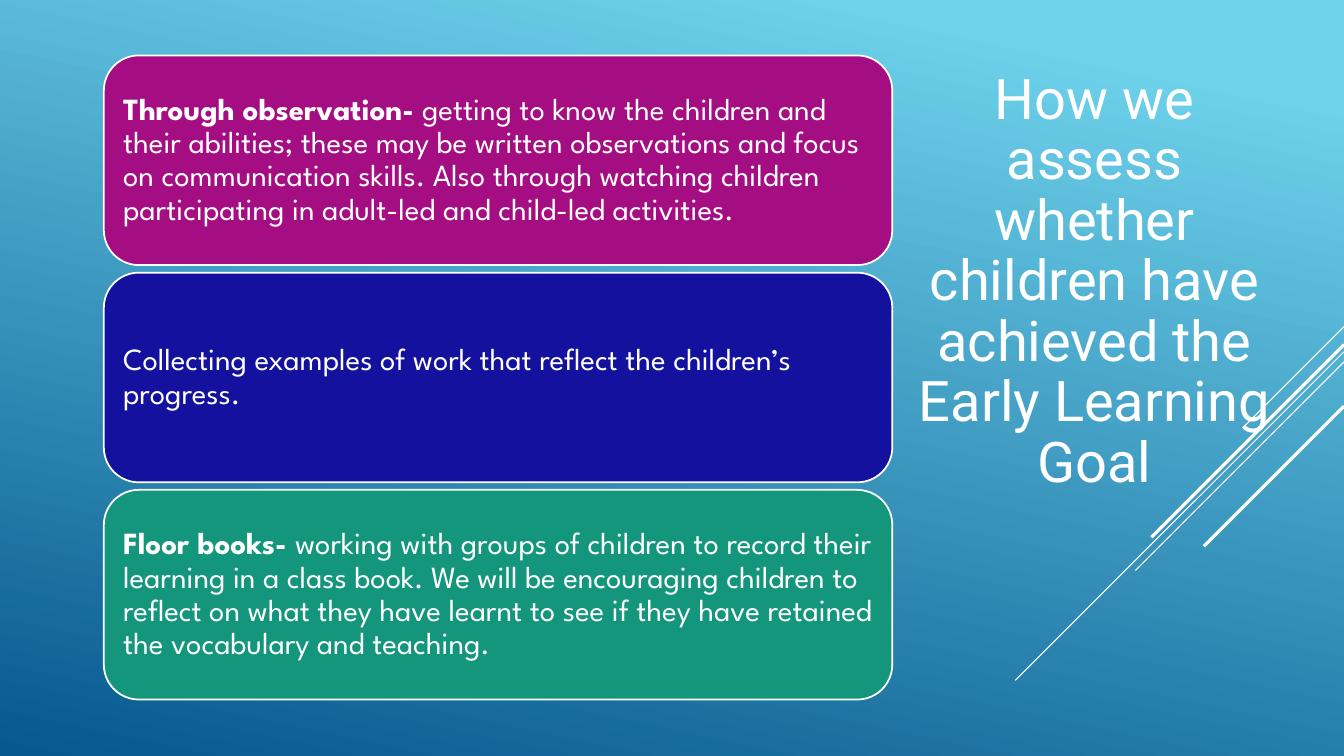
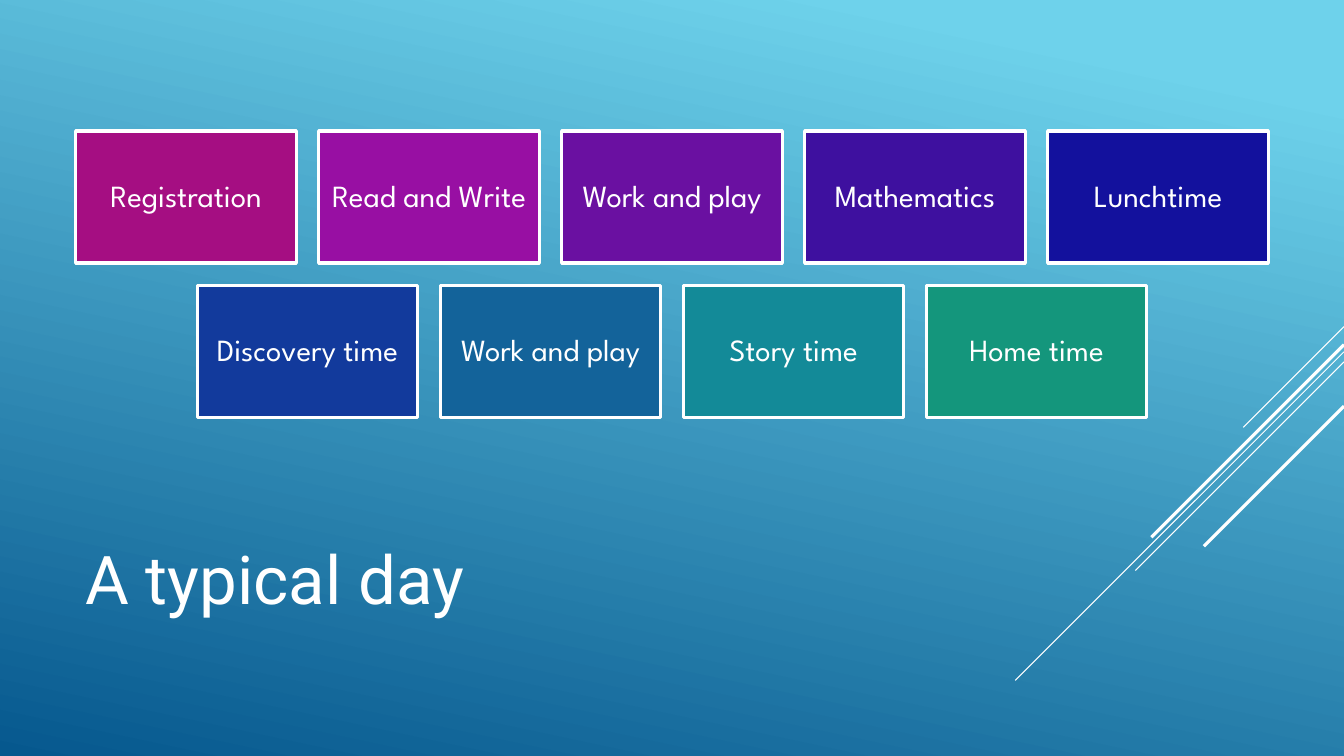
from lxml import etree
from pptx import Presentation
from pptx.dml.color import RGBColor
from pptx.enum import shapes, text
from pptx.oxml import ns
from pptx.util import Inches, Pt

WIDTH, HEIGHT = 13.33, 7.5
WHITE = "FFFFFF"
BACKGROUND_STOPS = [(0.1, "6ED2EB"), (1.0, "06588E")]
BACKGROUND_ANGLE = 258
STREAKS = [
    (3.24, 1.0, 0.75),
    (3.49, 3.26, 0.75),
    (3.59, 2.07, 0.75),
    (3.42, 1.91, 2.25),
    (4.03, 1.39, 2.25),
]
CENTER = text.PP_ALIGN.CENTER
LEFT = text.PP_ALIGN.LEFT
TITLE_FONT = {"name": "Roboto"}
BODY_FONT = {"name": "League Spartan", "size": Pt(22)}
TITLE_MARGINS = (0.1, 0.05)
BODY_MARGINS = (0.09, 0.09)

ASSESSMENT_TITLE = "How we assess whether children have achieved the Early Learning Goal"
ASSESSMENT_METHODS = [
    ("A50E82", "Through observation- ",
     "getting to know the children and their abilities; these may be written observations "
     "and focus on communication skills. Also through watching children participating in "
     "adult-led and child-led activities."),
    ("13119D", "",
     "Collecting examples of work that reflect the children’s progress."),
    ("14967C", "Floor books- ",
     "working with groups of children to record their learning in a class book. We will be "
     "encouraging children to reflect on what they have learnt to see if they have retained "
     "the vocabulary and teaching."),
]
DAY_TITLE = "A typical day"
DAY_ROWS = [
    [("Registration", "A50E82"), ("Read and Write", "980FA3"), ("Work and play", "6A10A1"),
     ("Mathematics", "3E109F"), ("Lunchtime", "13119D")],
    [("Discovery time", "123A9C"), ("Work and play", "13639A"), ("Story time", "138A98"),
     ("Home time", "14967C")],
]


def color(value):
    return RGBColor.from_string(value)


def set_attributes(target, values):
    for name, value in values.items():
        setattr(target, name, value)


def write(shape, runs, font, alignment, margins, line_spacing=0.9):
    frame = shape.text_frame
    across, down = map(Inches, margins)
    set_attributes(frame, {
        "word_wrap": True, "vertical_anchor": text.MSO_ANCHOR.MIDDLE,
        "margin_left": across, "margin_right": across,
        "margin_top": down, "margin_bottom": down,
    })
    paragraph = frame.paragraphs[0]
    set_attributes(paragraph, {"alignment": alignment, "line_spacing": line_spacing})
    for content, bold in runs:
        run = paragraph.add_run()
        run.text = content
        set_attributes(run.font, {**font, "bold": bold})
        run.font.color.rgb = color(WHITE)


def add_title(slide, box, content, size, alignment, line_spacing=0.9):
    title = slide.shapes.add_textbox(*map(Inches, box))
    font = {**TITLE_FONT, "size": Pt(size)}
    write(title, [(content, False)], font, alignment, TITLE_MARGINS, line_spacing)


def add_card(slide, kind, box, fill, line_width, runs, alignment):
    card = slide.shapes.add_shape(kind, *map(Inches, box))
    card.shadow.inherit = False
    card.fill.solid()
    card.fill.fore_color.rgb = color(fill)
    card.line.color.rgb = color(WHITE)
    card.line.width = Pt(line_width)
    write(card, runs, BODY_FONT, alignment, BODY_MARGINS)


def add_streak(slide, top, reach, width):
    ends = (WIDTH, top, WIDTH - reach, top + reach)
    streak = slide.shapes.add_connector(shapes.MSO_CONNECTOR.STRAIGHT, *map(Inches, ends))
    streak.line.color.rgb = color(WHITE)
    streak.line.width = Pt(width)
    etree.SubElement(streak._element.spPr, ns.qn("a:effectLst"))


def add_base_slide(presentation):
    slide = presentation.slides.add_slide(presentation.slide_layouts[6])
    fill = slide.background.fill
    fill.gradient()
    fill.gradient_angle = BACKGROUND_ANGLE
    for stop, (position, value) in zip(fill.gradient_stops, BACKGROUND_STOPS):
        stop.position = position
        stop.color.rgb = color(value)
    for streak in STREAKS:
        add_streak(slide, *streak)
    return slide


def build_assessment(presentation):
    slide = add_base_slide(presentation)
    add_title(slide, (8.99, 1.03, 3.73, 3.55), ASSESSMENT_TITLE, 40, CENTER)
    left, top, width, height, gap = 1.03, 0.55, 7.82, 2.08, 0.075
    for index, (fill, lead, detail) in enumerate(ASSESSMENT_METHODS):
        box = (left, top + index * (height + gap), width, height)
        runs = [(content, bold) for content, bold in [(lead, True), (detail, False)] if content]
        add_card(slide, shapes.MSO_SHAPE.ROUNDED_RECTANGLE, box, fill, 1.25, runs, LEFT)


def build_day(presentation):
    slide = add_base_slide(presentation)
    add_title(slide, (0.75, 4.91, 9.33, 1.65), DAY_TITLE, 48, LEFT, 1.0)
    top, width, height, gap = 1.3, 2.19, 1.31, 0.22
    for row_index, row in enumerate(DAY_ROWS):
        row_width = len(row) * (width + gap) - gap
        left = (WIDTH - row_width) / 2
        for column, (label, fill) in enumerate(row):
            box = (left + column * (width + gap), top + row_index * (height + gap), width, height)
            add_card(slide, shapes.MSO_SHAPE.RECTANGLE, box, fill, 2.25, [(label, False)], CENTER)


def main():
    presentation = Presentation()
    presentation.slide_width = Inches(WIDTH)
    presentation.slide_height = Inches(HEIGHT)
    build_assessment(presentation)
    build_day(presentation)
    presentation.save("out.pptx")


if __name__ == "__main__":
    main()
